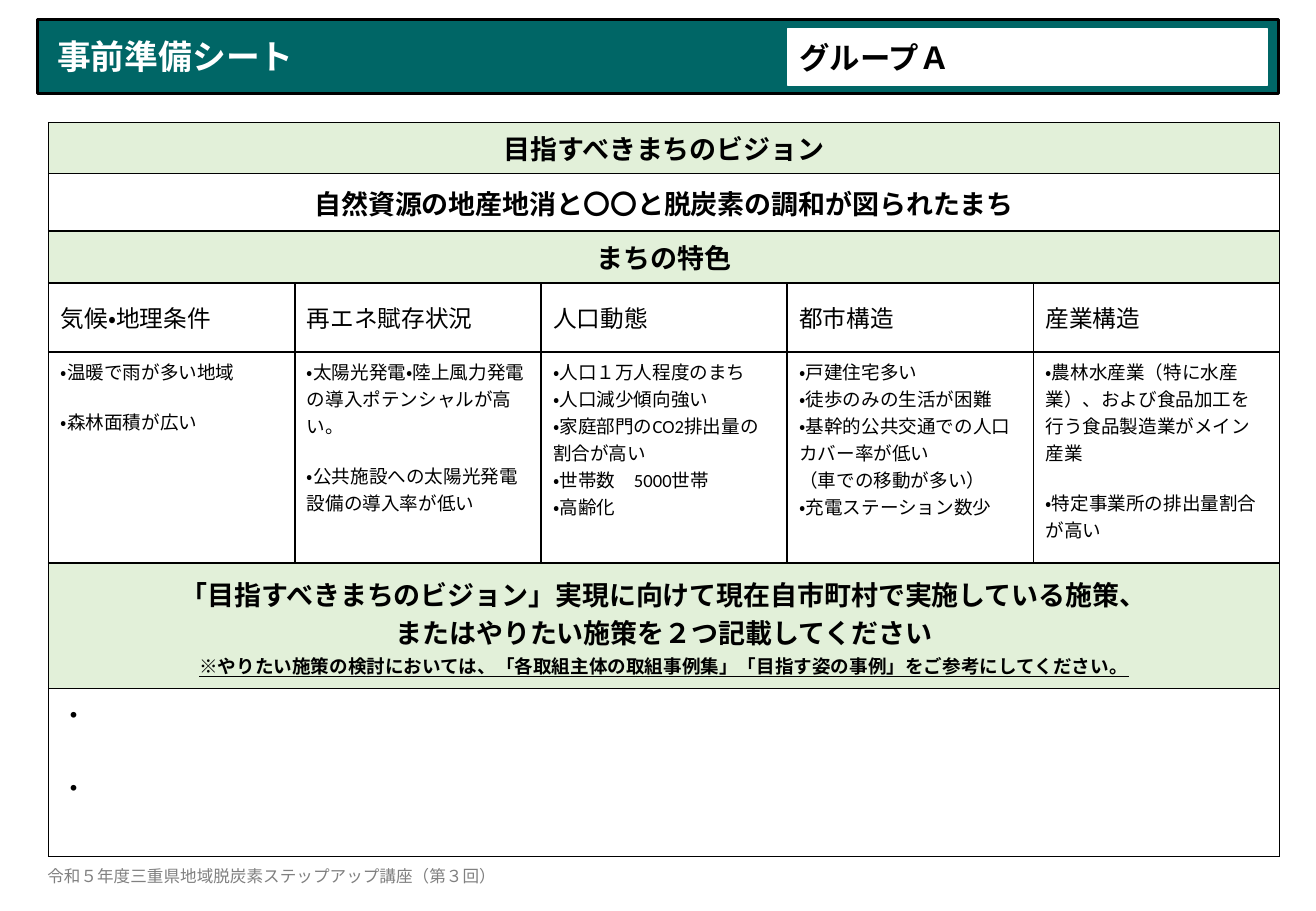
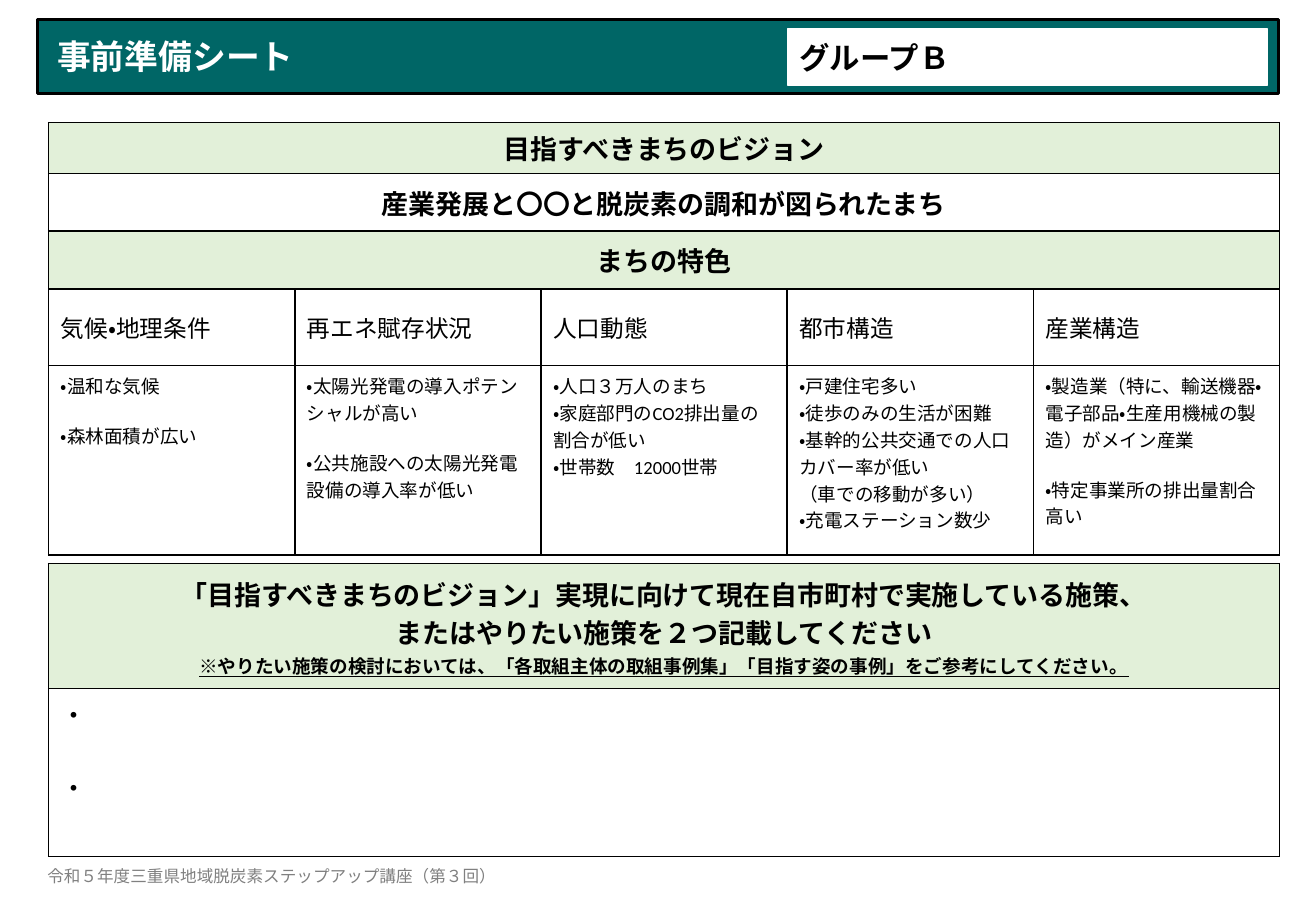
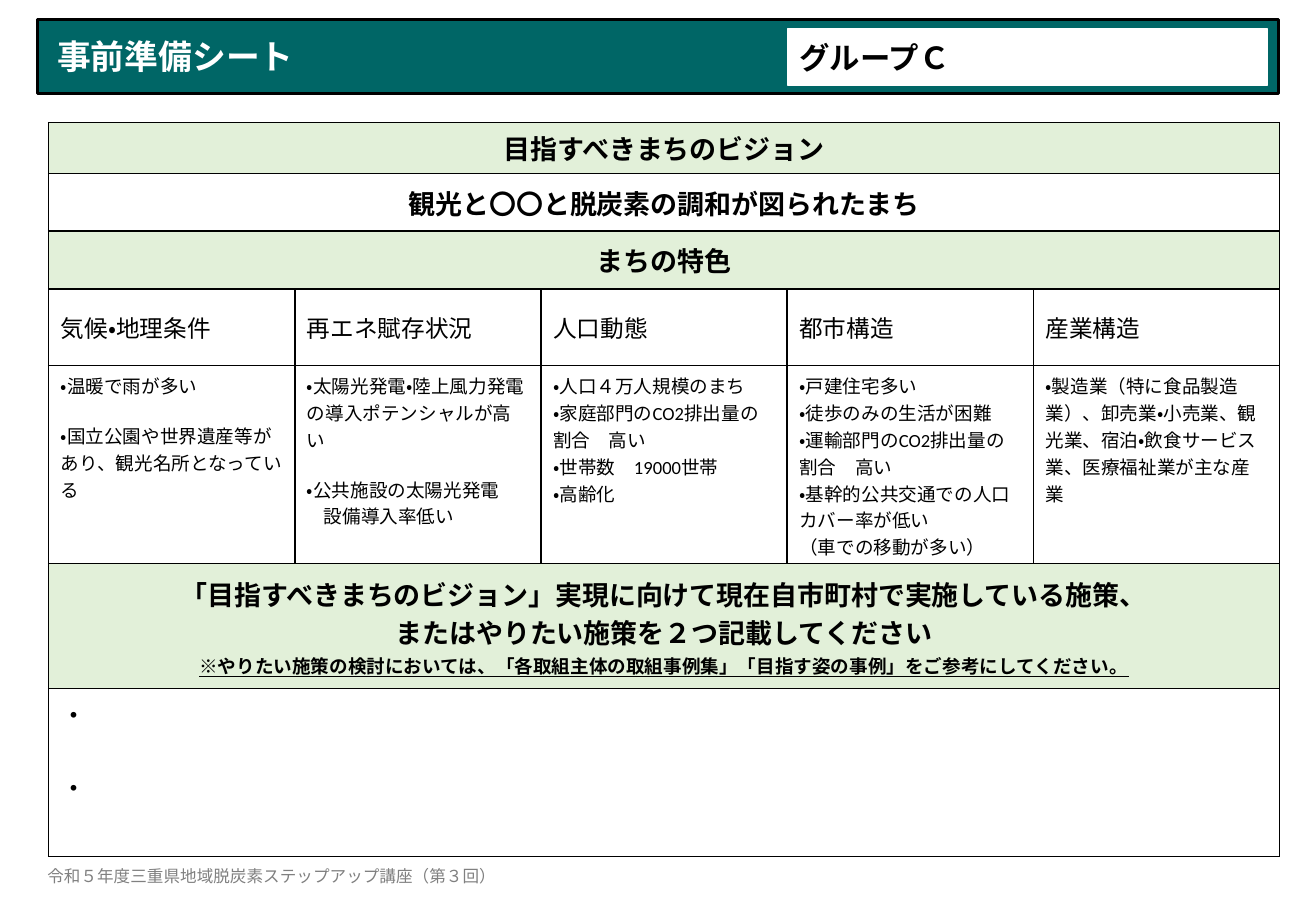
from lxml import etree
from pptx import Presentation
from pptx import util as u
from pptx.dml.color import RGBColor
from pptx.enum import lang, shapes, text
from pptx.oxml.ns import qn

PX = 9144
COL = {"teal": "006666", "green": "E2F0D9", "white": "FFFFFF", "black": "000000", "gray": "808080"}
LEFT, MID = text.PP_ALIGN.LEFT, text.PP_ALIGN.CENTER
ROW = text.MSO_ANCHOR.MIDDLE
BASE = {"name": "Calibri", "size": 11, "bold": False, "color": "black"}
HEAD = {"size": 16, "bold": True, "align": MID}
GAP = {"space_before": 13.6}
INDENT = {"left": 14}

TOPICS = ["気候・地理条件", "再エネ賦存状況", "人口動態", "都市構造", "産業構造"]
SOLAR = ("・公共施設への太陽光発電設備の導入率が低い", GAP)
HOMES = ["・戸建住宅多い", "・徒歩のみの生活が困難"]
TRANSIT = ["・基幹的公共交通での人口カバー率が低い", "（車での移動が多い）"]
CHARGE = ["・充電ステーション数少"]
GROUPS = [
    {
        "name": "グループＡ",
        "vision": "自然資源の地産地消と〇〇と脱炭素の調和が図られたまち",
        "rows": [44, 57, 173],
        "traits": [
            ["・温暖で雨が多い地域", ("・森林面積が広い", GAP)],
            ["・太陽光発電・陸上風力発電の導入ポテンシャルが高い。", SOLAR],
            ["・人口１万人程度のまち", "・人口減少傾向強い", "・家庭部門のCO2排出量の割合が高い",
             "・世帯数　5000世帯", "・高齢化"],
            HOMES + TRANSIT + CHARGE,
            ["・農林水産業（特に水産業）、および食品加工を行う食品製造業がメイン産業",
             ("・特定事業所の排出量割合が高い", GAP)],
        ],
    },
    {
        "name": "グループＢ",
        "vision": "産業発展と〇〇と脱炭素の調和が図られたまち",
        "rows": [49, 63, 156],
        "traits": [
            ["・温和な気候", ("・森林面積が広い", GAP)],
            ["・太陽光発電の導入ポテンシャルが高い", SOLAR],
            ["・人口３万人のまち", "・家庭部門のCO2排出量の割合が低い", "・世帯数　12000世帯"],
            HOMES + TRANSIT + CHARGE,
            ["・製造業（特に、輸送機器・電子部品・生産用機械の製造）がメイン産業",
             ("・特定事業所の排出量割合高い", GAP)],
        ],
    },
    {
        "name": "グループＣ",
        "vision": "観光と〇〇と脱炭素の調和が図られたまち",
        "rows": [49, 63, 156],
        "traits": [
            ["・温暖で雨が多い", ("・国立公園や世界遺産等があり、観光名所となっている", GAP)],
            ["・太陽光発電・陸上風力発電の導入ポテンシャルが高い",
             ("・公共施設の太陽光発電", GAP), ("設備導入率低い", INDENT)],
            ["・人口４万人規模のまち", "・家庭部門のCO2排出量の割合　高い",
             "・世帯数　19000世帯", "・高齢化"],
            HOMES + ["・運輸部門のCO2排出量の割合　高い"] + TRANSIT,
            ["・製造業（特に食品製造業）、卸売業・小売業、観光業、宿泊・飲食サービス業、医療福祉業が主な産業"],
        ],
    },
]
ACTION = [
    ("「目指すべきまちのビジョン」実現に向けて現在自市町村で実施している施策、", {"name": "Arial"}),
    "またはやりたい施策を２つ記載してください",
    ("※やりたい施策の検討においては、「各取組主体の取組事例集」「目指す姿の事例」をご参考にしてください。",
     {"size": 11, "underline": True}),
]


def rgb(key):
    return RGBColor.from_string(COL[key])


def emu(*vals):
    return [u.Emu(v * PX) for v in vals]


def style(para, fmt):
    run = para.runs[0].font
    run.language_id = lang.MSO_LANGUAGE_ID.JAPANESE
    for key, val in fmt.items():
        if key == "color":
            run.color.rgb = rgb(val)
        elif key == "align":
            para.alignment = val
        elif key == "left":
            para._p.get_or_add_pPr().set("marL", str(val * PX))
        elif key == "space_before":
            para.space_before = u.Pt(val)
        elif key == "line_spacing":
            para.line_spacing = val
        else:
            setattr(run, key, u.Pt(val) if key == "size" else val)


def write(frame, items, **fmt):
    for i, item in enumerate(items):
        words, more = (item, {}) if isinstance(item, str) else item
        para = frame.add_paragraph() if i else frame.paragraphs[0]
        para.add_run().text = words
        style(para, {**BASE, **fmt, **more})


def paint(box, fill, line, width):
    box.fill.solid()
    box.fill.fore_color.rgb = rgb(fill)
    box.line.color.rgb = rgb(line)
    box.line.width = u.Pt(width)


def frame_up(frame, **fmt):
    opts = {"word_wrap": True, "vertical_anchor": ROW, "auto_size": text.MSO_AUTO_SIZE.NONE}
    for key, val in {**opts, **fmt}.items():
        setattr(frame, key, val)


def edge(cell):
    props = cell._tc.get_or_add_tcPr()
    for side in ("lnL", "lnR", "lnT", "lnB"):
        line = etree.SubElement(props, qn("a:" + side), w=str(u.Pt(1)))
        fill = etree.SubElement(line, qn("a:solidFill"))
        etree.SubElement(fill, qn("a:srgbClr"), val=COL["black"])


def grid(slide, top, rows, cols):
    box = slide.shapes.add_table(len(rows), cols, *emu(40, top, 1013, sum(rows)))
    table = box.table
    table.first_row = table.horz_banding = False
    for row, high in zip(table.rows, rows):
        row.height = u.Emu(high * PX)
    for col in table.columns:
        col.width = u.Emu(1013 * PX // cols)
    for cell in table.iter_cells():
        edge(cell)
        cell.fill.solid()
        cell.fill.fore_color.rgb = rgb("white")
    return table


def fill_cell(cell, items, mid=True, tint="white", **fmt):
    cell.fill.fore_color.rgb = rgb(tint)
    if mid:
        cell.vertical_anchor = ROW
    write(cell.text_frame, items, **fmt)


def banner(slide, name):
    title = slide.shapes.title
    title.left, title.top, title.width, title.height = emu(31, 16, 1021, 61)
    paint(title, "teal", "black", 1.5)
    frame_up(title.text_frame, margin_left=u.Emu(16 * PX))
    write(title.text_frame, ["事前準備シート"], size=20, bold=True, color="white", align=LEFT)
    label = slide.shapes.add_shape(shapes.MSO_SHAPE.RECTANGLE, *emu(648, 24, 395, 46))
    label.shadow.inherit = False
    paint(label, "white", "white", 1)
    frame_up(label.text_frame)
    write(label.text_frame, [name], size=18, bold=True, align=LEFT)


def footer(slide):
    note = slide.shapes.add_textbox(*emu(31, 704, 414, 37)).text_frame
    side, edge_in = emu(8, 4)
    frame_up(note, margin_left=side, margin_right=side, margin_top=edge_in, margin_bottom=edge_in)
    write(note, ["令和５年度三重県地域脱炭素ステップアップ講座（第３回）"],
          name="Noto Sans CJK JP", size=9.8, color="gray", line_spacing=0.9)


def traits(slide, group):
    table = grid(slide, 189, group["rows"], len(TOPICS))
    table.cell(0, 0).merge(table.cell(0, len(TOPICS) - 1))
    fill_cell(table.cell(0, 0), ["まちの特色"], tint="green", **HEAD)
    for i, (topic, items) in enumerate(zip(TOPICS, group["traits"])):
        fill_cell(table.cell(1, i), [topic], size=14)
        fill_cell(table.cell(2, i), items, mid=False)


def vision(slide, words):
    table = grid(slide, 101, [42, 47], 1)
    fill_cell(table.cell(0, 0), ["目指すべきまちのビジョン"], tint="green", **HEAD)
    fill_cell(table.cell(1, 0), [words], **HEAD)


def action(slide):
    table = grid(slide, 464, [103, 138], 1)
    fill_cell(table.cell(0, 0), ACTION, tint="green", **HEAD)
    fill_cell(table.cell(1, 0), ["・", ("・", {"space_before": 20})], mid=False, size=16)


def main():
    deck = Presentation()
    deck.slide_width, deck.slide_height = emu(1083, 750)
    for group in GROUPS:
        slide = deck.slides.add_slide(deck.slide_layouts[5])
        banner(slide, group["name"])
        footer(slide)
        traits(slide, group)
        vision(slide, group["vision"])
        action(slide)
    deck.save("out.pptx")


if __name__ == "__main__":
    main()
